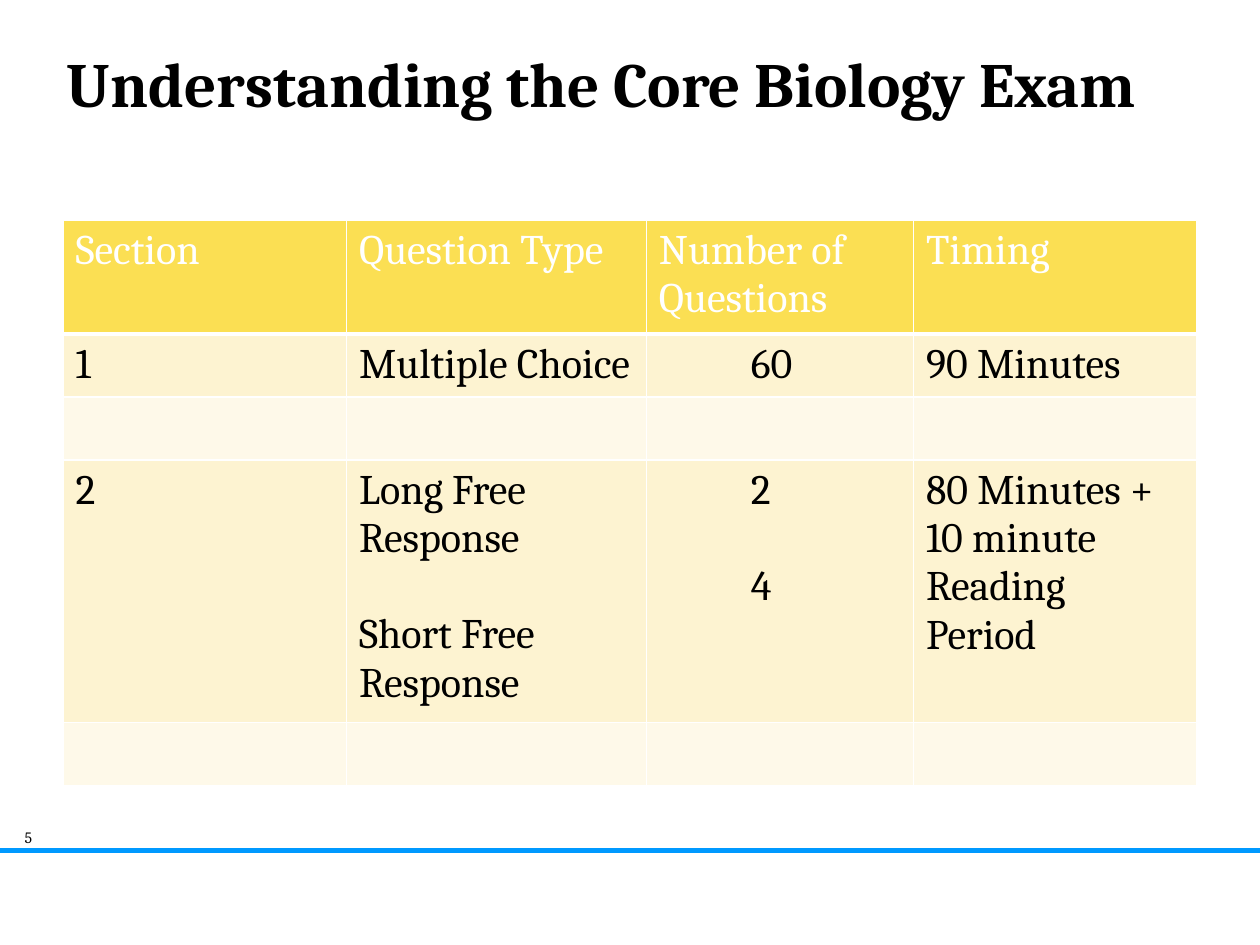
from lxml.etree import SubElement
from pptx import Presentation
from pptx.dml.color import RGBColor
from pptx.enum.shapes import MSO_CONNECTOR
from pptx.enum.text import PP_ALIGN
from pptx.oxml import parse_xml
from pptx.oxml.ns import nsdecls, qn
from pptx.util import Inches, Pt

COLORS = {
    "text": "000000",
    "white": "FFFFFF",
    "rule": "0099FF",
    "header": "FBDF53",
    "band": "FDF3D1",
    "pale": "FEF9E9",
}
FONT = "Cambria"
COL_WIDTHS = [2.25, 2.38, 2.12, 2.25]
MIN_ROW_HEIGHT = 0.41
CELL_SIZE = 24
NUMBER_COL = 2
EXAM_ROWS = [
    ["Section", "Question Type", "Number of Questions", "Timing"],
    ["1", "Multiple Choice", "60", "90 Minutes"],
    [""] * 4,
    ["2", "Long Free Response\nShort Free Response", "2\n4",
     "80 Minutes + 10 minute Reading Period"],
    [""] * 4,
]


def rgb(name):
    return RGBColor.from_string(COLORS[name])


class SlideBuilder:
    def __init__(self, slide):
        self.slide = slide

    def style(self, p, size, color="text", bold=False):
        p.font.name = FONT
        p.font.size = Pt(size)
        p.font.bold = bold
        p.font.color.rgb = rgb(color)

    def text(self, text, left, top, width, height, size, bold=False, align=PP_ALIGN.LEFT):
        box = self.slide.shapes.add_textbox(
            Inches(left), Inches(top), Inches(width), Inches(height))
        tf = box.text_frame
        tf.word_wrap = True
        p = tf.paragraphs[0]
        p.text = text
        p.alignment = align
        self.style(p, size, bold=bold)

    def rule(self, y, width, color, weight):
        line = self.slide.shapes.add_connector(
            MSO_CONNECTOR.STRAIGHT, Inches(0), Inches(y), Inches(width), Inches(y))
        line.line.color.rgb = rgb(color)
        line.line.width = Pt(weight)
        SubElement(line._element.spPr, qn("a:effectLst"))

    def borders(self, cell, bottom):
        """Draw white cell edges; the bottom edge has its own weight in points."""
        tc_pr = cell._tc.get_or_add_tcPr()
        for i, (side, weight) in enumerate(zip("LRTB", (1, 1, 1, bottom))):
            tc_pr.insert(i, parse_xml(
                f'<a:ln{side} {nsdecls("a")} w="{Pt(weight)}"><a:solidFill>'
                f'<a:srgbClr val="{COLORS["white"]}"/></a:solidFill></a:ln{side}>'))

    def cell(self, cell, text, fill, color, bottom):
        cell.fill.solid()
        cell.fill.fore_color.rgb = rgb(fill)
        self.borders(cell, bottom)
        cell.text = text
        for i, p in enumerate(cell.text_frame.paragraphs):
            self.style(p, CELL_SIZE, color)
            if i:
                p.space_before = Pt(27.5)
            if not text:
                SubElement(p._p, qn("a:endParaRPr"), sz=str(CELL_SIZE * 100))

    def table(self, rows, left, top):
        """Add the table; each row grows from the least height to fit its text."""
        table = self.slide.shapes.add_table(
            len(rows), len(COL_WIDTHS), Inches(left), Inches(top),
            Inches(sum(COL_WIDTHS)), Inches(MIN_ROW_HEIGHT * len(rows))).table
        for column, width in zip(table.columns, COL_WIDTHS):
            column.width = Inches(width)
        for r, row in enumerate(rows):
            is_header = r == 0
            fill = "header" if is_header else "band" if r % 2 else "pale"
            for c, text in enumerate(row):
                cell = table.cell(r, c)
                self.cell(cell, text, fill, "white" if is_header else "text",
                          3 if is_header else 1)
                if c == NUMBER_COL and not is_header:
                    cell.margin_left = Inches(0.83)


def main():
    prs = Presentation()
    prs.slide_width, prs.slide_height = Inches(10), Inches(7.5)
    s = SlideBuilder(prs.slides.add_slide(prs.slide_layouts[6]))
    s.rule(6.75, 10, "rule", 3)
    s.text("5", 0.03, 6.52, 0.39, 0.25, 9, align=PP_ALIGN.CENTER)
    s.text("Understanding the Core Biology Exam", 0.43, 0.3, 9.08, 1.25, 36, bold=True)
    s.table(EXAM_ROWS, 0.5, 1.75)
    prs.save("out.pptx")


if __name__ == "__main__":
    main()
